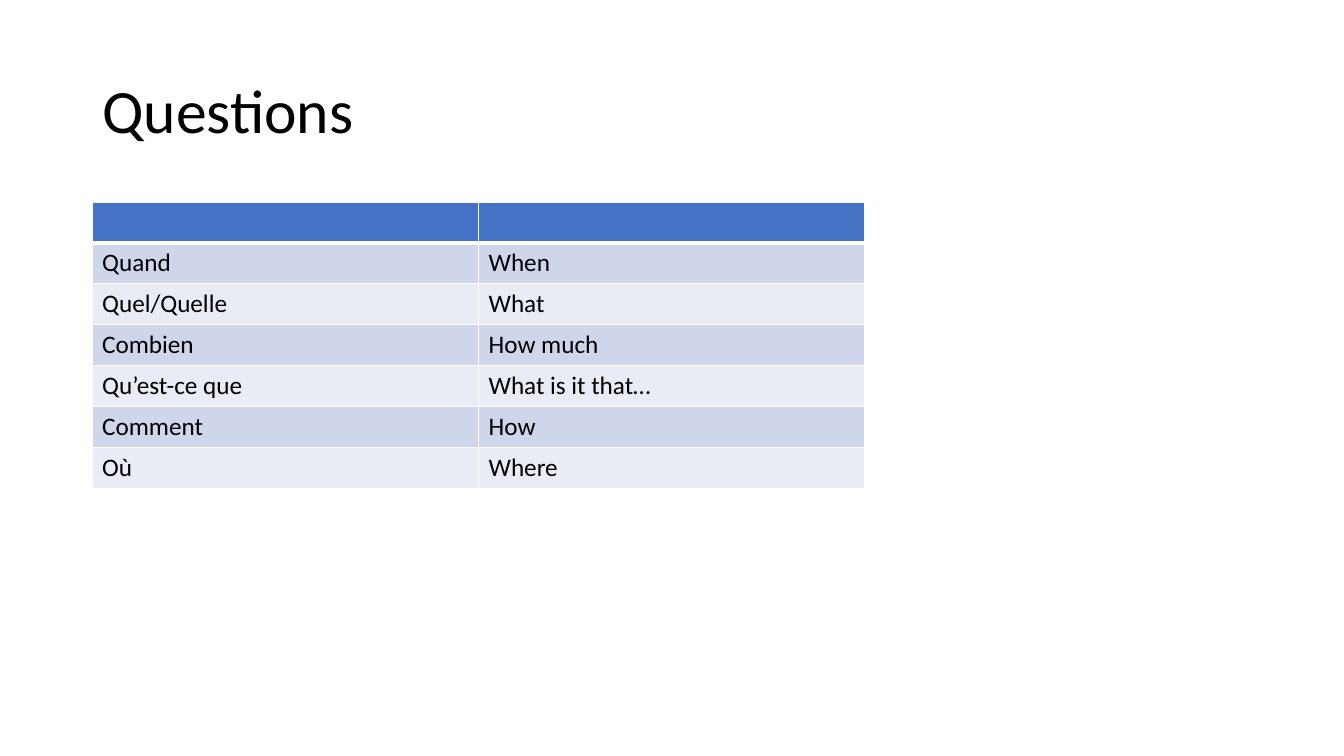
from lxml.etree import SubElement
from pptx import Presentation
from pptx.dml.color import RGBColor
from pptx.enum.text import MSO_VERTICAL_ANCHOR as Anchor
from pptx.oxml.ns import qn
from pptx.util import Cm, Pt

COLORS = {
    "text": "000000",
    "header": "4472C4",
    "odd": "CFD5EA",
    "even": "E9EBF5",
    "border": "FFFFFF",
}

QUESTIONS = [
    ("", ""),
    ("Quand", "When"),
    ("Quel/Quelle", "What"),
    ("Combien", "How much"),
    ("Qu’est-ce que", "What is it that…"),
    ("Comment", "How"),
    ("Où", "Where"),
]


class SlideBuilder:
    font_name = "Calibri"

    def __init__(self, slide):
        self.slide = slide

    def style(self, paragraph, size):
        font = paragraph.font
        font.name = self.font_name
        font.size = Pt(size)
        font.bold = False
        font.color.rgb = RGBColor.from_string(COLORS["text"])

    def title(self, text, left, top, width, height):
        shape = self.slide.shapes.add_textbox(Cm(left), Cm(top), Cm(width), Cm(height))
        frame = shape.text_frame
        frame.word_wrap = True
        frame.vertical_anchor = Anchor.MIDDLE
        paragraph = frame.paragraphs[0]
        paragraph.text = text
        paragraph.line_spacing = 0.9
        self.style(paragraph, 44)

    def border(self, cell, side, width):
        properties = cell._tc.get_or_add_tcPr()
        line = SubElement(properties, qn(f"a:ln{side}"), w=str(Pt(width)))
        fill = SubElement(line, qn("a:solidFill"))
        SubElement(fill, qn("a:srgbClr"), val=COLORS["border"])

    def table(self, rows, left, top, width, row_height):
        shape = self.slide.shapes.add_table(
            len(rows), len(rows[0]), Cm(left), Cm(top), Cm(width), Cm(row_height * len(rows))
        )
        for row_index, texts in enumerate(rows):
            color = "header" if row_index == 0 else "odd" if row_index % 2 else "even"
            widths = {
                "L": 1,
                "R": 1,
                "T": 3 if row_index == 1 else 1,
                "B": 3 if row_index == 0 else 1,
            }
            for column_index, text in enumerate(texts):
                cell = shape.table.cell(row_index, column_index)
                cell.text = text
                self.style(cell.text_frame.paragraphs[0], 18)
                for side, line_width in widths.items():
                    self.border(cell, side, line_width)
                cell.fill.solid()
                cell.fill.fore_color.rgb = RGBColor.from_string(COLORS[color])


def main():
    presentation = Presentation()
    presentation.slide_width = Cm(33.87)
    presentation.slide_height = Cm(19.05)
    slide = presentation.slides.add_slide(presentation.slide_layouts[6])
    builder = SlideBuilder(slide)
    builder.title("Questions", 2.33, 1.01, 29.21, 3.68)
    builder.table(QUESTIONS, 2.32, 5.09, 19.48, 1.03)
    presentation.save("out.pptx")


if __name__ == "__main__":
    main()
